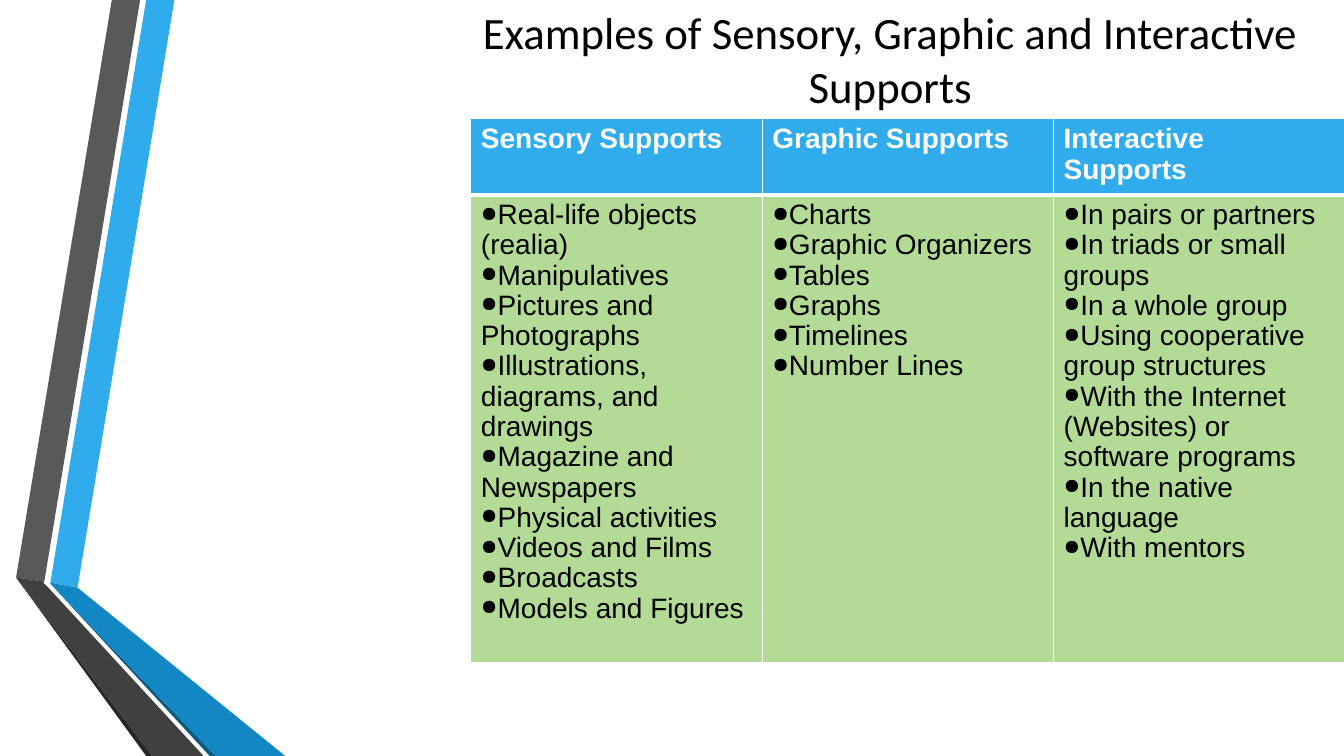
"""Build the slide on sensory, graphic and interactive supports."""
from dataclasses import dataclass

from lxml.etree import SubElement
from pptx import Presentation
from pptx.dml.color import RGBColor
from pptx.enum.text import MSO_ANCHOR as Anchor, PP_ALIGN as Align
from pptx.oxml import parse_xml
from pptx.oxml.ns import nsdecls, qn
from pptx.util import Inches, Pt

BLACK, WHITE = "000000", "FFFFFF"
BLUE, GREEN = "30ACEC", "B3DB95"


@dataclass
class Ribbon:
    color: str
    points: list[tuple[float, float]]


@dataclass
class Column:
    heading: str
    items: list[str]


RIBBONS = [
    Ribbon(BLUE, [(0.5, 5.78), (0.77, 5.83), (1.73, 0), (1.45, 0)]),
    Ribbon("595959", [(1.39, 0), (1.11, 0), (0.16, 5.73), (0.44, 5.77)]),
    Ribbon("262626", [(0.16, 5.73), (1.45, 7.5), (1.51, 7.5)]),
    Ribbon("0C5A82", [(0.5, 5.79), (2.08, 7.5), (2.14, 7.5)]),
    Ribbon("1287C3", [(0.5, 5.79), (2.14, 7.5), (2.83, 7.5), (0.77, 5.83), (0.5, 5.78)]),
    Ribbon("404040", [(2.02, 7.5), (0.48, 5.83), (0.43, 5.78), (0.44, 5.77),
                      (0.16, 5.73), (1.51, 7.5)]),
]

COLUMNS = [
    Column("Sensory Supports", [
        "Real-life objects (realia)", "Manipulatives", "Pictures and Photographs",
        "Illustrations, diagrams, and drawings", "Magazine and Newspapers",
        "Physical activities", "Videos and Films", "Broadcasts", "Models and Figures"]),
    Column("Graphic Supports", [
        "Charts", "Graphic Organizers", "Tables", "Graphs", "Timelines", "Number Lines"]),
    Column("Interactive Supports", [
        "In pairs or partners", "In triads or small groups", "In a whole group",
        "Using cooperative group structures",
        "With the Internet (Websites) or software programs",
        "In the native language", "With mentors"]),
]

TITLE_FONT = {"name": "Calibri", "size": Pt(32), "bold": False}
HEAD_FONT = {"name": "Arial", "size": Pt(20), "bold": True}
ITEM_FONT = HEAD_FONT | {"bold": False}


def rgb(color: str) -> RGBColor:
    return RGBColor.from_string(color)


def add_text(p, text: str, font: dict, color: str) -> None:
    r = p.add_run()
    r.text = text
    for name, value in font.items():
        setattr(r.font, name, value)
    r.font.color.rgb = rgb(color)


def add_ribbon(s, ribbon: Ribbon) -> None:
    start, *rest = [(Inches(x), Inches(y)) for x, y in ribbon.points]
    builder = s.shapes.build_freeform(*start)
    builder.add_line_segments(rest, close=True)
    sp = builder.convert_to_shape()
    sp.shadow.inherit = False
    sp.fill.solid()
    sp.fill.fore_color.rgb = rgb(ribbon.color)
    sp.line.fill.background()


def add_title(s, text: str) -> None:
    sp = s.shapes.add_textbox(Inches(4.33), 0, Inches(9), Inches(1.17))
    tf = sp.text_frame
    tf.word_wrap = True
    tf.vertical_anchor = Anchor.MIDDLE
    p = tf.paragraphs[0]
    p.alignment = Align.CENTER
    add_text(p, text, TITLE_FONT, BLACK)


def add_bullet(p) -> None:
    pPr = p._p.get_or_add_pPr()
    pPr.set("marL", "0")
    pPr.set("indent", "0")
    color = SubElement(pPr, qn("a:buClr"))
    SubElement(color, qn("a:srgbClr")).set("val", BLACK)
    SubElement(pPr, qn("a:buSzPct")).set("val", "75000")
    SubElement(pPr, qn("a:buChar")).set("char", "●")


def style_cell(cell, color: str, top: float, bottom: float) -> None:
    cell.fill.solid()
    cell.fill.fore_color.rgb = rgb(color)
    tcPr = cell._tc.get_or_add_tcPr()
    widths = {"lnL": 1, "lnR": 1, "lnT": top, "lnB": bottom}
    for i, (side, width) in enumerate(widths.items()):
        tcPr.insert(i, parse_xml(
            f'<a:{side} {nsdecls("a")} w="{Pt(width)}"><a:solidFill>'
            f'<a:srgbClr val="{WHITE}"/></a:solidFill></a:{side}>'))


def add_supports(s, columns: list[Column]) -> None:
    frame = s.shapes.add_table(2, len(columns), Inches(4.67), Inches(1.17),
                               Inches(8.67), Inches(5.17))
    table = frame.table
    for row, height in zip(table.rows, (0.58, 4.59)):
        row.height = Inches(height)
    for i, column in enumerate(columns):
        table.columns[i].width = Inches(2.89)
        head, body = table.cell(0, i), table.cell(1, i)
        style_cell(head, BLUE, top=1, bottom=3)
        style_cell(body, GREEN, top=3, bottom=1)
        add_text(head.text_frame.paragraphs[0], column.heading, HEAD_FONT, WHITE)
        tf = body.text_frame
        for j, item in enumerate(column.items):
            p = tf.add_paragraph() if j else tf.paragraphs[0]
            p.line_spacing = 0.97
            add_bullet(p)
            add_text(p, item, ITEM_FONT, BLACK)


def main() -> None:
    prs = Presentation()
    prs.slide_width, prs.slide_height = Inches(13.33), Inches(7.5)
    s = prs.slides.add_slide(prs.slide_layouts[6])
    for ribbon in RIBBONS:
        add_ribbon(s, ribbon)
    add_title(s, "Examples of Sensory, Graphic and Interactive Supports")
    add_supports(s, COLUMNS)
    prs.save("out.pptx")


if __name__ == "__main__":
    main()
